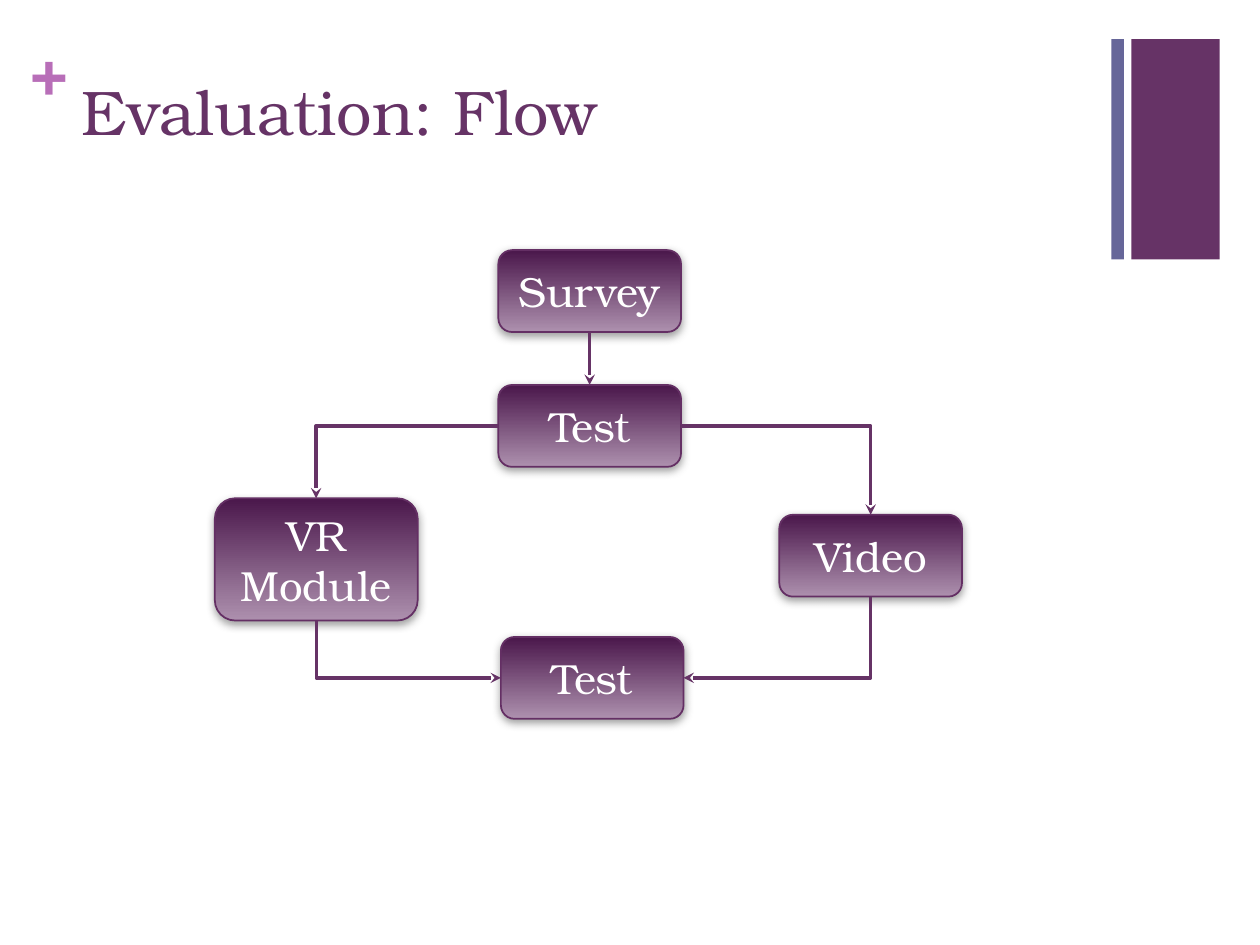
from dataclasses import dataclass

from lxml import etree
from pptx import Presentation
from pptx import util as u
from pptx.dml.color import RGBColor
from pptx.enum import shapes, text
from pptx.oxml import ns

COLUMNS, ROWS = 100, 75  # square grid over the slide
CELL = u.Inches(0.1)
TOP, LEFT, BOTTOM, RIGHT = range(4)  # connection sites of a box


@dataclass(frozen=True)
class Theme:
    font: str = "TeX Gyre Bonum"
    title_size: int = 36
    node_size: int = 24
    purple: str = "663366"
    slate: str = "666699"
    orchid: str = "B86EB8"
    white: str = "FFFFFF"
    node_top: str = "4A174B"
    node_bottom: str = "AD90AE"
    node_line: str = "642F64"
    shadow: str = "808080"


THEME = Theme()


def rgb(value):
    return RGBColor.from_string(value)


def grid(*cells):
    return [u.Emu(round(cell * CELL)) for cell in cells]


def add_xml(parent, tag, **attributes):
    return etree.SubElement(parent, ns.qn(tag), attributes)


def write(frame, content, size, color, bold=False, align=text.PP_ALIGN.LEFT,
          anchor=text.MSO_ANCHOR.TOP, margins=(1, 0.5)):
    frame.word_wrap = True
    frame.vertical_anchor = anchor
    frame.margin_left = frame.margin_right = grid(margins[0])[0]
    frame.margin_top = frame.margin_bottom = grid(margins[1])[0]
    para = frame.paragraphs[0]
    para.alignment = align
    span = para.add_run()
    span.text = content
    span.font.name = THEME.font
    span.font.size = u.Pt(size)
    span.font.bold = bold
    span.font.color.rgb = rgb(color)


def add_label(page, area, content, **style):
    box = page.shapes.add_textbox(*grid(*area))
    write(box.text_frame, content, THEME.title_size, **style)


def add_bar(page, area, color):
    bar = page.shapes.add_shape(shapes.MSO_SHAPE.RECTANGLE, *grid(*area))
    bar.shadow.inherit = False
    bar.fill.solid()
    bar.fill.fore_color.rgb = rgb(color)
    bar.line.fill.background()


def add_node(page, content, center, size=(14.5, 6.5)):
    corner = [middle - length / 2 for middle, length in zip(center, size)]
    node = page.shapes.add_shape(shapes.MSO_SHAPE.ROUNDED_RECTANGLE,
                                 *grid(*corner, *size))
    node.fill.gradient()
    node.fill.gradient_angle = 270
    colors = (THEME.node_top, THEME.node_bottom)
    for position, (stop, color) in enumerate(zip(node.fill.gradient_stops, colors)):
        stop.position = position
        stop.color.rgb = rgb(color)
    node.line.color.rgb = rgb(THEME.node_line)
    node.line.width = u.Pt(1)

    # Soft shadow straight below
    node.shadow.inherit = False
    effects = node._element.spPr.find(ns.qn("a:effectLst"))
    shadow = add_xml(effects, "a:outerShdw", blurRad=str(u.Pt(5)),
                     dist=str(u.Pt(2)), dir="5400000", rotWithShape="0")
    tint = add_xml(shadow, "a:srgbClr", val=THEME.shadow)
    add_xml(tint, "a:alpha", val="75000")

    write(node.text_frame, content, THEME.node_size, THEME.white,
          align=text.PP_ALIGN.CENTER, anchor=text.MSO_ANCHOR.MIDDLE)
    return node


def turn_corner(arrow, vertical_first):
    """Give the connector a single bend between its two ends."""
    arrow._element.spPr.find(ns.qn("a:prstGeom")).set("prst", "bentConnector2")
    if not vertical_first:
        return
    # The preset runs across first, so a quarter turn makes it run down first
    rightward = arrow.end_x > arrow.begin_x
    left, top, width, height = arrow.left, arrow.top, arrow.width, arrow.height
    arrow.left = left + (width - height) // 2
    arrow.top = top + (height - width) // 2
    arrow.width, arrow.height = height, width
    arrow.rotation = 270 if rightward else 90
    arrow._element.spPr.xfrm.flipH = rightward


def add_arrow(page, start, start_site, end, end_site):
    straight = (start_site, end_site) == (BOTTOM, TOP)
    kind = shapes.MSO_CONNECTOR.STRAIGHT if straight else shapes.MSO_CONNECTOR.ELBOW
    arrow = page.shapes.add_connector(kind, 0, 0, 0, 0)
    arrow.begin_connect(start, start_site)
    arrow.end_connect(end, end_site)
    if not straight:
        turn_corner(arrow, vertical_first=start_site == BOTTOM)
    arrow.line.color.rgb = rgb(THEME.purple)
    arrow.line.width = u.Pt(2)
    add_xml(arrow.line._get_or_add_ln(), "a:tailEnd", type="stealth")
    add_xml(arrow._element.spPr, "a:effectLst")


def main():
    deck = Presentation()
    deck.slide_width, deck.slide_height = grid(COLUMNS, ROWS)
    page = deck.slides.add_slide(deck.slide_layouts[6])

    # Corner decoration and title
    add_bar(page, (89.8, 3.1, 7, 17.5), THEME.purple)
    add_label(page, (2.4, 2.5, 2.9, 6.1), "+", color=THEME.orchid,
              bold=True, margins=(0, 0))
    add_bar(page, (88.2, 3.1, 1, 17.5), THEME.slate)
    add_label(page, (5.5, 5.3, 82.6, 12.2), "Evaluation: Flow", color=THEME.purple)

    # Evaluation steps, placed by their centres
    survey = add_node(page, "Survey", (46.8, 23.1))
    first_test = add_node(page, "Test", (46.8, 33.8))
    module = add_node(page, "VR Module", (25.1, 44.4), size=(16.1, 9.7))
    video = add_node(page, "Video", (69.1, 44.1))
    last_test = add_node(page, "Test", (47, 53.8))

    # Flow between the steps
    add_arrow(page, survey, BOTTOM, first_test, TOP)
    add_arrow(page, first_test, LEFT, module, TOP)
    add_arrow(page, first_test, RIGHT, video, TOP)
    add_arrow(page, module, BOTTOM, last_test, LEFT)
    add_arrow(page, video, BOTTOM, last_test, RIGHT)

    deck.save("out.pptx")


if __name__ == "__main__":
    main()
